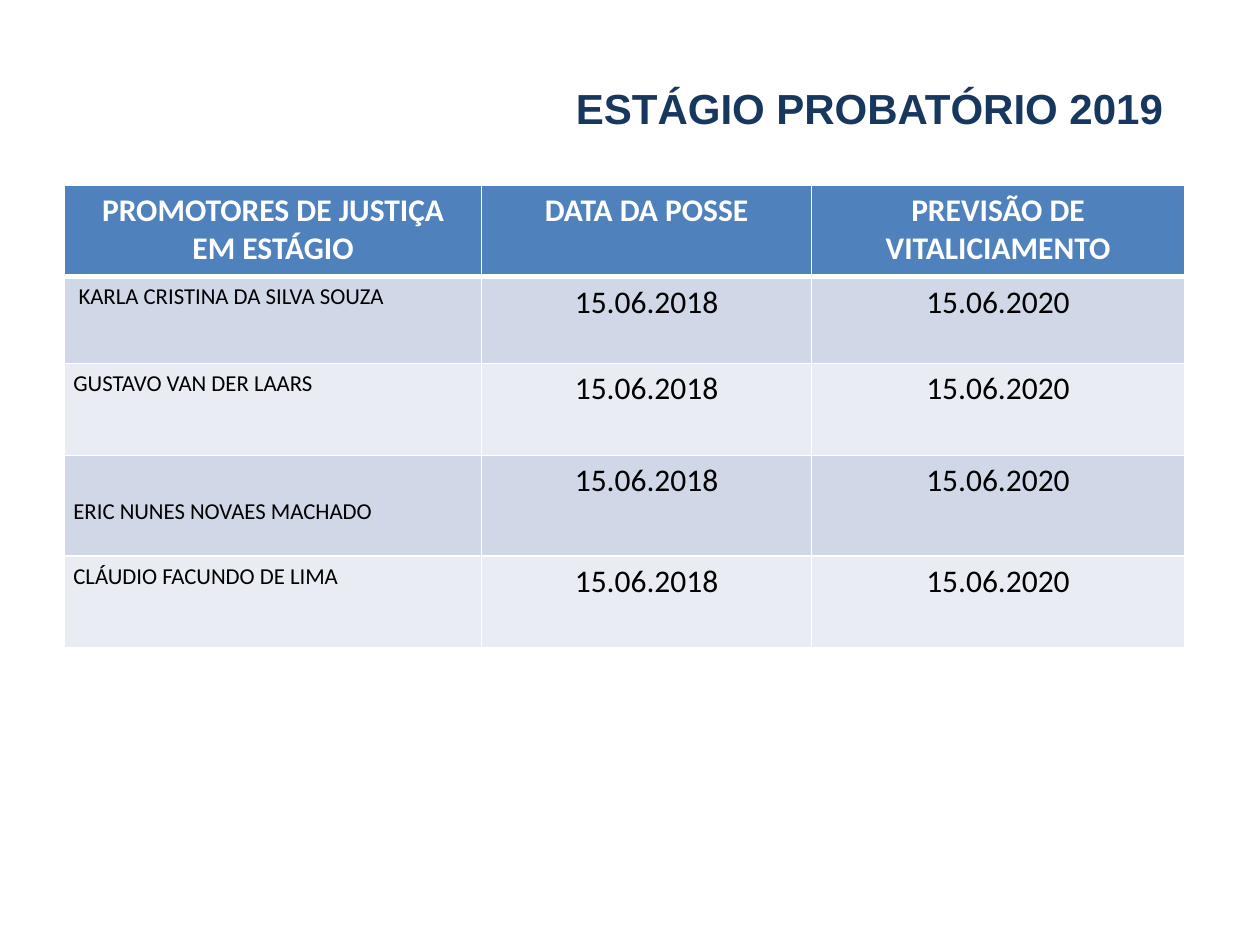
"""Build the 2019 probation-period slide: a title above a table of prosecutors."""
from typing import NamedTuple

from lxml.etree import SubElement
from pptx import Presentation
from pptx.dml.color import RGBColor
from pptx.enum.text import MSO_ANCHOR as ANCHOR, PP_ALIGN as ALIGN
from pptx.oxml.ns import qn
from pptx.util import Cm, Pt

NAVY = RGBColor(0x17, 0x37, 0x5E)
BLUE = RGBColor(0x4F, 0x81, 0xBD)
BAND_DARK = RGBColor(0xD0, 0xD8, 0xE7)
BAND_LIGHT = RGBColor(0xE9, 0xEC, 0xF3)
WHITE = RGBColor(0xFF, 0xFF, 0xFF)
BLACK = RGBColor(0x00, 0x00, 0x00)
THIN, THICK = Pt(0.96), Pt(3)
COL_WIDTHS = (8.41, 6.65, 7.52)


class TextStyle(NamedTuple):
    size: float
    color: RGBColor
    bold: bool = False
    align: ALIGN = ALIGN.CENTER
    font: str = "Calibri"
    spacing: float = 1.0


class Row(NamedTuple):
    texts: tuple[str, str, str]
    height: float
    name_top: float = 0.13


TITLE = TextStyle(24, NAVY, True, ALIGN.RIGHT, "Arial", 0.93)
HEADER = TextStyle(18, WHITE, True)
NAME = TextStyle(13, BLACK, align=ALIGN.LEFT)
DATE = TextStyle(18, BLACK)

POSSE, VITALICIAMENTO = "15.06.2018", "15.06.2020"
ROWS = (
    Row(("PROMOTORES DE JUSTIÇA EM ESTÁGIO", "DATA DA POSSE",
         "PREVISÃO DE VITALICIAMENTO"), 1.85),
    Row((" KARLA CRISTINA DA SILVA SOUZA", POSSE, VITALICIAMENTO), 1.75),
    Row(("GUSTAVO VAN DER LAARS", POSSE, VITALICIAMENTO), 1.85),
    Row(("ERIC NUNES NOVAES MACHADO", POSSE, VITALICIAMENTO), 2.03, 0.86),
    Row(("CLÁUDIO FACUNDO DE LIMA", POSSE, VITALICIAMENTO), 1.85),
)


def write(tf, text: str, style: TextStyle) -> None:
    """Put one styled run in the first paragraph of a text frame."""
    p = tf.paragraphs[0]
    p.alignment = style.align
    p.line_spacing = style.spacing
    r = p.add_run()
    r.text = text
    r.font.name = style.font
    r.font.size = Pt(style.size)
    r.font.bold = style.bold
    r.font.color.rgb = style.color


def set_borders(cell, top: int, bottom: int) -> None:
    """Give a cell white borders, with its own top and bottom widths."""
    tc_pr = cell._tc.get_or_add_tcPr()
    for side, width in (("L", THIN), ("R", THIN), ("T", top), ("B", bottom)):
        ln = SubElement(tc_pr, qn(f"a:ln{side}"), w=str(int(width)))
        fill = SubElement(ln, qn("a:solidFill"))
        SubElement(fill, qn("a:srgbClr"), val=str(WHITE))


def add_title(s, text: str) -> None:
    """Add the right-aligned slide title."""
    sp = s.shapes.add_textbox(Cm(1.3), Cm(1.12), Cm(22.4), Cm(2.21))
    tf = sp.text_frame
    tf.word_wrap = True
    tf.vertical_anchor = ANCHOR.MIDDLE
    write(tf, text, TITLE)


def add_schedule(s, rows: tuple[Row, ...]) -> None:
    """Add the banded table of names and dates."""
    height = sum(row.height for row in rows)
    table = s.shapes.add_table(len(rows), len(COL_WIDTHS), Cm(1.3), Cm(3.73),
                               Cm(sum(COL_WIDTHS)), Cm(height)).table
    for col, width in zip(table.columns, COL_WIDTHS):
        col.width = Cm(width)
    for i, row in enumerate(rows):
        table.rows[i].height = Cm(row.height)
        band = BLUE if i == 0 else BAND_DARK if i % 2 else BAND_LIGHT
        for j, text in enumerate(row.texts):
            cell = table.cell(i, j)
            set_borders(cell, THICK if i == 1 else THIN, THICK if i == 0 else THIN)
            cell.fill.solid()
            cell.fill.fore_color.rgb = band
            if i and j == 0:
                cell.margin_left = cell.margin_right = Cm(0.18)
                cell.margin_top = Cm(row.name_top)
            write(cell.text_frame, text, HEADER if i == 0 else DATE if j else NAME)


def main() -> None:
    """Create and save the presentation."""
    prs = Presentation()
    prs.slide_width, prs.slide_height = Cm(25.4), Cm(19.05)
    s = prs.slides.add_slide(prs.slide_layouts[6])
    add_title(s, "ESTÁGIO PROBATÓRIO 2019")
    add_schedule(s, ROWS)
    prs.save("out.pptx")


if __name__ == "__main__":
    main()
